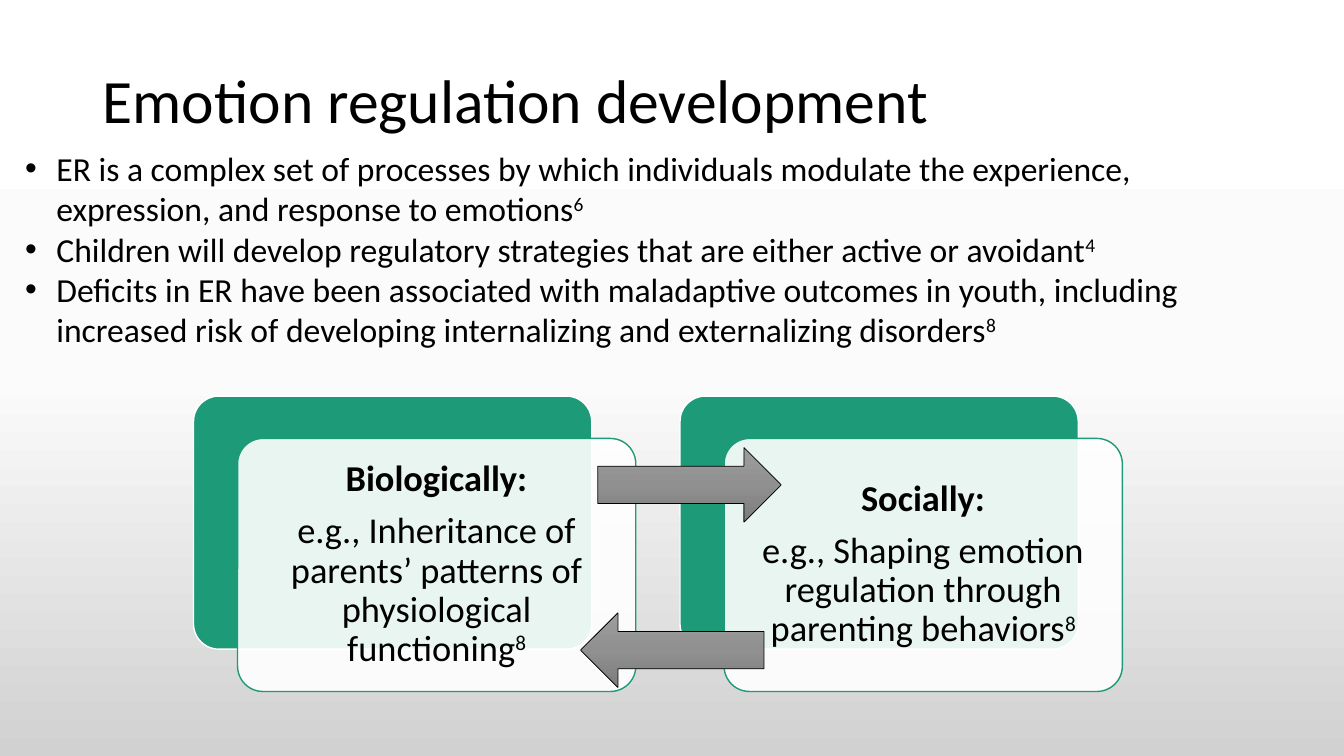
from copy import deepcopy

from lxml import etree
from pptx import Presentation
from pptx.dml.color import RGBColor
from pptx.enum.shapes import MSO_SHAPE
from pptx.enum.text import MSO_ANCHOR, PP_ALIGN
from pptx.oxml.ns import qn
from pptx.util import Inches, Pt

ROUNDED = MSO_SHAPE.ROUNDED_RECTANGLE
RIGHT_ARROW, LEFT_ARROW = MSO_SHAPE.RIGHT_ARROW, MSO_SHAPE.LEFT_ARROW
TOP, MIDDLE = MSO_ANCHOR.TOP, MSO_ANCHOR.MIDDLE
LEFT, CENTER = PP_ALIGN.LEFT, PP_ALIGN.CENTER

COLORS = {"text": "000000", "green": "1D9A78", "white": "FFFFFF"}
PAGE_FADE = ("FFFFFF", "FBFBFB", "D1D1D1")
ARROW_FADE = ("9D9D9D", "909090", "7C7C7C")
FONT = "Calibri"
CARD_SIZE = (29.63, 33.47)
ARROW_SIZE = (13.65, 9.87)


class Deck:
    """Draws styled elements on one slide, with lengths in percent of its size."""

    def __init__(self):
        self.prs = Presentation()
        self.prs.slide_width, self.prs.slide_height = Inches(13.33), Inches(7.5)
        self.s = self.prs.slides.add_slide(self.prs.slide_layouts[6])
        self.fade(self.s.background.fill, self.s._element, PAGE_FADE)

    def box(self, x, y, w, h):
        col, row = self.prs.slide_width / 100, self.prs.slide_height / 100
        return int(x * col), int(y * row), int(w * col), int(h * row)

    def fade(self, fill, element, colors):
        fill.gradient()
        fill.gradient_angle = 270
        stops = element.find(".//" + qn("a:gsLst"))
        stops.insert(1, deepcopy(stops[0]))
        for i, (stop, color) in enumerate(zip(fill.gradient_stops, colors)):
            stop.position = i / 2
            stop.color.rgb = RGBColor.from_string(color)

    def shape(self, kind, box, line, width, fill=None, fade=None, alpha=None):
        sp = self.s.shapes.add_shape(kind, *self.box(*box))
        sp.shadow.inherit = False
        sp.line.color.rgb = RGBColor.from_string(COLORS[line])
        sp.line.width = Pt(width)
        if fade:
            self.fade(sp.fill, sp._element, fade)
        else:
            sp.fill.solid()
            sp.fill.fore_color.rgb = RGBColor.from_string(COLORS[fill])
        if alpha:
            color = sp._element.spPr.find(qn("a:solidFill"))[0]
            etree.SubElement(color, qn("a:alpha"), val=str(alpha * 1000))
        if kind == ROUNDED:
            sp.adjustments[0] = 0.1
        return sp

    def add_runs(self, sp, paragraphs, size, align=LEFT, anchor=TOP,
                 spacing=None, after=0, bullet=False):
        tf = sp.text_frame
        tf.word_wrap = True
        tf.vertical_anchor = anchor
        for i, runs in enumerate(paragraphs):
            p = tf.add_paragraph() if i else tf.paragraphs[0]
            p.alignment, p.line_spacing, p.space_after = align, spacing, Pt(after)
            if bullet:
                pPr = p._p.get_or_add_pPr()
                pPr.set("marL", str(Inches(0.31)))
                pPr.set("indent", str(-Inches(0.31)))
                etree.SubElement(pPr, qn("a:buFont"), typeface="Arial")
                etree.SubElement(pPr, qn("a:buChar"), char="•")
            for text, style in runs:
                r = p.add_run()
                r.text = text
                r.font.name, r.font.size = FONT, Pt(size)
                r.font.bold = style == "bold"
                r.font.color.rgb = RGBColor.from_string(COLORS["text"])
                if style == "super":
                    r.font._element.set("baseline", "30000")
        return tf

    def text(self, box, paragraphs, size, **style):
        sp = self.s.shapes.add_textbox(*self.box(*box))
        self.add_runs(sp, paragraphs, size, **style)

    def card(self, x, y, heading, body, note):
        self.shape(ROUNDED, (x, y, *CARD_SIZE), "white", 1, fill="green")
        front = self.shape(ROUNDED, (x + 3.28, y + 5.6, *CARD_SIZE), "green", 1,
                           fill="white", alpha=90)
        tf = self.add_runs(front, [[(heading, "bold")], [(body, ""), (note, "super")]],
                           26, align=CENTER, anchor=MIDDLE, spacing=0.9, after=9)
        tf.margin_left = tf.margin_right = Inches(0.11)
        tf.margin_top = tf.margin_bottom = Inches(0.11)

    def arrow(self, kind, x, y):
        self.shape(kind, (x, y, *ARROW_SIZE), "text", 0.5, fade=ARROW_FADE)


POINTS = [
    ("ER is a complex set of processes by which individuals modulate the "
     "experience, expression, and response to emotions", "6"),
    ("Children will develop regulatory strategies that are either active "
     "or avoidant", "4"),
    ("Deficits in ER have been associated with maladaptive outcomes in youth, "
     "including increased risk of developing internalizing and externalizing "
     "disorders", "8"),
]
CARDS = [
    ("Biologically:", "e.g., Inheritance of parents’ patterns of "
     "physiological functioning", "8"),
    ("Socially:", "e.g., Shaping emotion regulation through "
     "parenting behaviors", "8"),
]


def main():
    deck = Deck()
    deck.text((6.9, 4, 86.27, 19.33), [[("Emotion regulation development", "")]], 44,
              anchor=MIDDLE, spacing=0.9)
    for i, card in enumerate(CARDS):
        deck.card(14.4 + 36.2 * i, 52.4, *card)
    deck.arrow(RIGHT_ARROW, 44.48, 59.2)
    deck.arrow(LEFT_ARROW, 43.2, 81.07)
    deck.text((1.13, 18.93, 95.65, 32.27),
              [[(point, ""), (note, "super")] for point, note in POINTS], 24, bullet=True)
    deck.prs.save("out.pptx")


if __name__ == "__main__":
    main()
